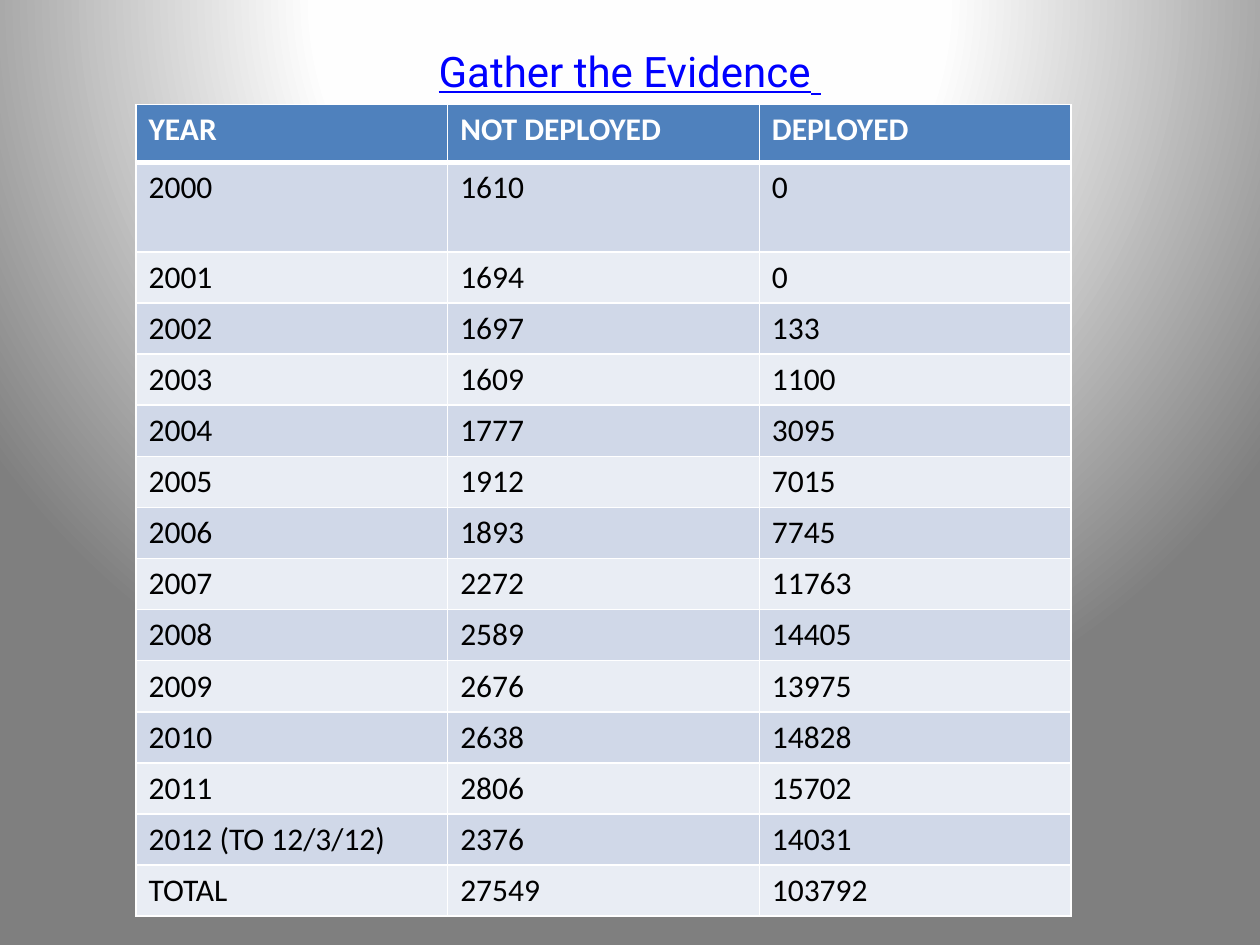
from pptx import Presentation
from pptx.dml.color import RGBColor
from pptx.enum.text import MSO_ANCHOR, PP_ALIGN
from pptx.oxml import parse_xml
from pptx.oxml.ns import nsdecls
from pptx.util import Inches, Pt

MIDDLE = MSO_ANCHOR.MIDDLE
CENTER = PP_ALIGN.CENTER

WHITE = RGBColor(0xFF, 0xFF, 0xFF)
NEAR_WHITE = RGBColor(0xFE, 0xFE, 0xFE)
GREY = RGBColor(0x7F, 0x7F, 0x7F)
BLACK = RGBColor(0x00, 0x00, 0x00)
LINK_BLUE = RGBColor(0x00, 0x00, 0xFF)
HEADER_BLUE = RGBColor(0x4F, 0x81, 0xBD)
BANDS = (RGBColor(0xD0, 0xD8, 0xE8), RGBColor(0xE9, 0xED, 0xF4))

BACKGROUND_STOPS = ((0, WHITE), (40, NEAR_WHITE), (100, GREY))
HEADER_HEIGHT = Inches(0.46)
FIRST_YEAR_HEIGHT = Inches(0.71)
ROW_HEIGHT = Inches(0.4)

ROWS = [
    ("YEAR", "NOT DEPLOYED", "DEPLOYED"),
    ("2000", "1610", "0"),
    ("2001", "1694", "0"),
    ("2002", "1697", "133"),
    ("2003", "1609", "1100"),
    ("2004", "1777", "3095"),
    ("2005", "1912", "7015"),
    ("2006", "1893", "7745"),
    ("2007", "2272", "11763"),
    ("2008", "2589", "14405"),
    ("2009", "2676", "13975"),
    ("2010", "2638", "14828"),
    ("2011", "2806", "15702"),
    ("2012 (TO 12/3/12)", "2376", "14031"),
    ("TOTAL", "27549", "103792"),
]


def set_background(page):
    """Fill the page with a circular gradient centred above its top edge."""
    stops = "".join(
        f'<a:gs pos="{percent * 1000}"><a:srgbClr val="{color}"/></a:gs>'
        for percent, color in BACKGROUND_STOPS
    )
    background = parse_xml(
        f'<p:bg {nsdecls("p", "a")}><p:bgPr><a:gradFill rotWithShape="1">'
        f'<a:gsLst>{stops}</a:gsLst><a:path path="circle">'
        '<a:fillToRect l="50000" t="-80000" r="50000" b="180000"/>'
        "</a:path></a:gradFill><a:effectLst/></p:bgPr></p:bg>"
    )
    page.element.cSld.insert(0, background)


def add_title(page, left, top, width, height):
    """Place the centred, underlined title in the given box."""
    box = page.shapes.add_textbox(left, top, width, height)
    frame = box.text_frame
    frame.word_wrap = True
    frame.vertical_anchor = MIDDLE
    para = frame.paragraphs[0]
    para.alignment = CENTER
    for text, font_name in (("Gather the Evidence", "Roboto"), (" ", "TeX Gyre Pagella")):
        span = para.add_run()
        span.text = text
        span.font.name = font_name
        span.font.size = Pt(24)
        span.font.underline = True
        span.font.color.rgb = LINK_BLUE


def set_borders(cell, top, bottom):
    """Draw white cell borders with the given top and bottom widths in points."""
    properties = cell._tc.get_or_add_tcPr()
    for side, points in (("L", 1), ("R", 1), ("T", top), ("B", bottom)):
        properties.append(parse_xml(
            f'<a:ln{side} {nsdecls("a")} w="{Pt(points)}"><a:solidFill>'
            f'<a:srgbClr val="{WHITE}"/></a:solidFill></a:ln{side}>'
        ))


def format_cell(cell, text, row_index):
    """Write one cell and style it as header or banded body."""
    is_header = row_index == 0
    set_borders(cell, 3 if row_index == 1 else 1, 3 if is_header else 1)
    cell.fill.solid()
    cell.fill.fore_color.rgb = HEADER_BLUE if is_header else BANDS[(row_index - 1) % 2]
    cell.text_frame.text = text
    font = cell.text_frame.paragraphs[0].runs[0].font
    font.name = "Calibri"
    font.size = Pt(18)
    font.bold = is_header
    font.color.rgb = WHITE if is_header else BLACK


def add_deployment_table(page, left, top, width):
    """Place the yearly table with three equal columns."""
    heights = [HEADER_HEIGHT, FIRST_YEAR_HEIGHT] + [ROW_HEIGHT] * (len(ROWS) - 2)
    table = page.shapes.add_table(
        len(ROWS), len(ROWS[0]), left, top, width, sum(heights)
    ).table
    for row_index, (values, height) in enumerate(zip(ROWS, heights)):
        table.rows[row_index].height = height
        for column_index, text in enumerate(values):
            format_cell(table.cell(row_index, column_index), text, row_index)


def main():
    """Build and save the deck."""
    deck = Presentation()
    deck.slide_width = Inches(10)
    deck.slide_height = Inches(7.5)
    page = deck.slides.add_slide(deck.slide_layouts[6])
    set_background(page)
    add_deployment_table(page, Inches(1.08), Inches(0.83), Inches(7.42))
    add_title(page, Inches(0.5), Inches(0.3), Inches(9), Inches(0.53))
    deck.save("out.pptx")


if __name__ == "__main__":
    main()
